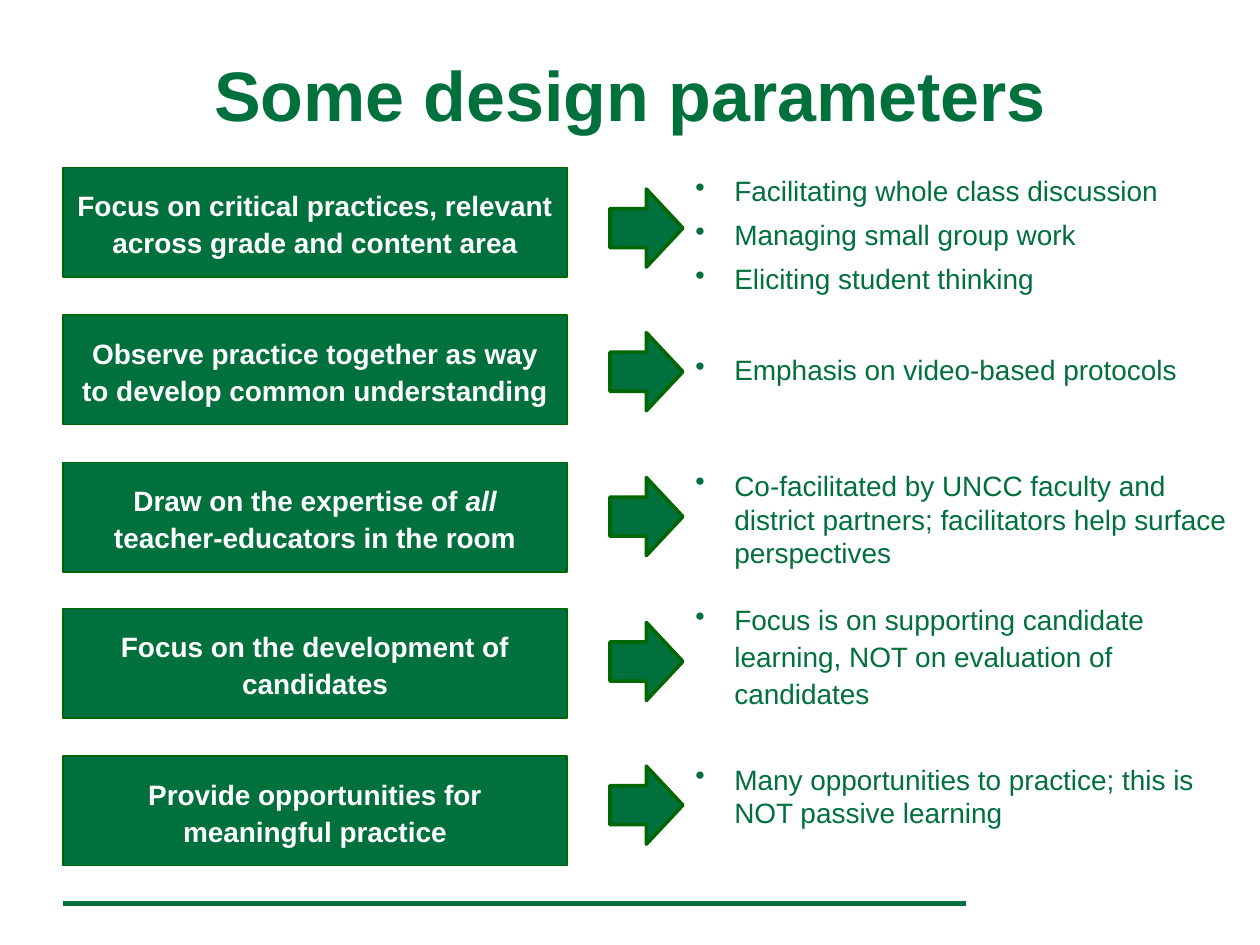
import pptx
import pptx.dml.color
import pptx.enum.shapes
import pptx.enum.text
import pptx.oxml
import pptx.oxml.ns
import pptx.util
from dataclasses import dataclass

PX = 9144  # EMU per px, 100 px to the inch
KIND = pptx.enum.shapes.MSO_SHAPE
ALIGN = pptx.enum.text.PP_ALIGN
ANCHOR = pptx.enum.text.MSO_ANCHOR


@dataclass(frozen=True)
class Theme:
    green: str = "00703C"
    edge: str = "006600"
    white: str = "FFFFFF"
    face: str = "Arial"
    title: int = 40
    body: int = 16


THEME = Theme()

# label, word in italics, bullets, top of the bullets, line spacing
ROWS = [
    ("Focus on critical practices, relevant across grade and content area", "",
     ["Facilitating whole class discussion", "Managing small group work",
      "Eliciting student thinking"], 133, None),
    ("Observe practice together as way to develop common understanding", "",
     ["Emphasis on video-based protocols"], 275, None),
    ("Draw on the expertise of all teacher-educators in the room", "all ",
     ["Co-facilitated by UNCC faculty and district partners; "
      "facilitators help surface perspectives"], 367, None),
    ("Focus on the development of candidates", "",
     ["Focus is on supporting candidate learning, NOT on evaluation of candidates"],
     471, 1.1),
    ("Provide opportunities for meaningful practice", "",
     ["Many opportunities to practice; this is NOT passive learning"], 600, None),
]


def color(code):
    return pptx.dml.color.RGBColor.from_string(code)


def emu(box):
    return [pptx.util.Emu(n * PX) for n in box]


def style(font, size, code, bold=False):
    font.name = THEME.face
    font.size = pptx.util.Pt(size)
    font.color.rgb = color(code)
    font.bold = bold


def add_text(slide, box):
    frame = slide.shapes.add_textbox(*emu(box)).text_frame
    frame.word_wrap = True
    return frame


def add_solid(slide, kind, box, width):
    shape = slide.shapes.add_shape(kind, *emu(box))
    shape.shadow.inherit = False
    shape.fill.solid()
    shape.fill.fore_color.rgb = color(THEME.green)
    shape.line.color.rgb = color(THEME.edge)
    shape.line.width = pptx.util.Pt(width)
    return shape


def add_title(slide, box, text):
    frame = add_text(slide, box)
    frame.margin_top = pptx.util.Emu(11 * PX)
    frame.text = text
    para = frame.paragraphs[0]
    para.alignment = ALIGN.CENTER
    style(para.runs[0].font, THEME.title, THEME.green, True)


def add_label(slide, box, text, slant):
    frame = add_solid(slide, KIND.RECTANGLE, box, 0.75).text_frame
    frame.word_wrap = True
    frame.vertical_anchor = ANCHOR.MIDDLE
    para = frame.paragraphs[0]
    para.alignment = ALIGN.CENTER
    para.line_spacing = 1.1
    parts = text.partition(slant) if slant else [text]
    for part in parts:
        run = para.add_run()
        run.text = part
        style(run.font, THEME.body, THEME.white, True)
        run.font.italic = part == slant


def add_bullets(slide, box, items, spacing):
    frame = add_text(slide, box)
    frame.text = "\n".join(items)
    for i, para in enumerate(frame.paragraphs):
        if i:
            para.space_before = pptx.util.Pt(6)
        if spacing:
            para.line_spacing = spacing
        props = para._p.get_or_add_pPr()
        props.set("marL", str(31 * PX))
        props.set("indent", str(-31 * PX))
        mark = pptx.oxml.parse_xml(
            f'<a:buChar {pptx.oxml.ns.nsdecls("a")} char="•"/>')
        props.append(mark)
        style(para.runs[0].font, THEME.body, THEME.green)


def add_rule(slide, left, right, y):
    line = slide.shapes.add_connector(
        pptx.enum.shapes.MSO_CONNECTOR.STRAIGHT, *emu((left, y, right, y)))
    line.line.color.rgb = color(THEME.green)
    line.line.width = pptx.util.Pt(2.5)
    line._element.spPr.append(pptx.oxml.parse_xml(
        f'<a:effectLst {pptx.oxml.ns.nsdecls("a")}/>'))


def add_rows(slide, left, top):
    """Pair each label with its arrow and bullets."""
    for i, (text, slant, items, y, spacing) in enumerate(ROWS):
        add_label(slide, (left, top + round(116.75 * i), 400, 87), text, slant)
        arrow = add_solid(slide, KIND.DOWN_ARROW,
                          (left + 432, top + 19 + round(114.5 * i), 62, 58), 2)
        arrow.rotation = 270
        add_bullets(slide, (left + 492, y, 458, 100), items, spacing)


def main():
    deck = pptx.Presentation()
    deck.slide_width, deck.slide_height = emu((1000, 750))
    slide = deck.slides.add_slide(deck.slide_layouts[6])
    add_rule(slide, 50, 767, 717)
    add_title(slide, (0, 30, 1000, 125), "Some design parameters")
    add_rows(slide, 50, 133)
    deck.save("out.pptx")


if __name__ == "__main__":
    main()
